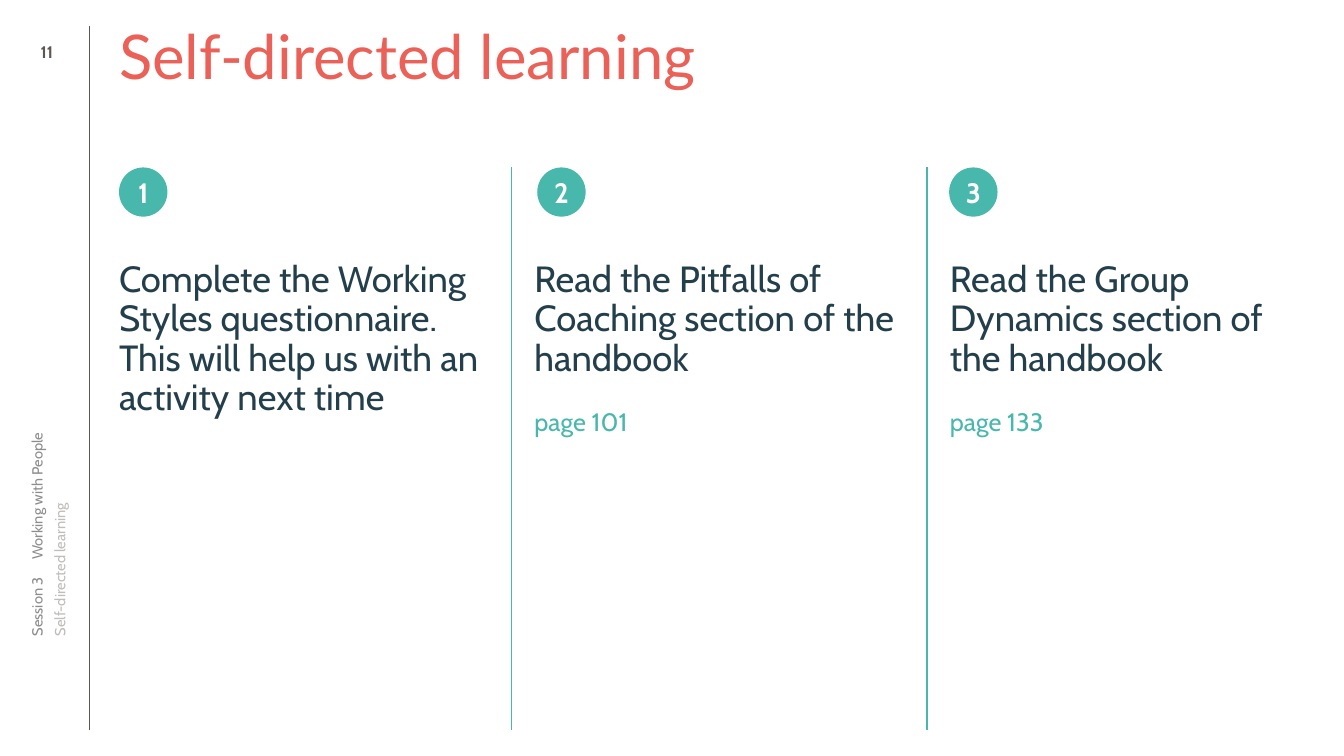
from pptx import Presentation
from pptx.dml.color import RGBColor
from pptx.enum.shapes import MSO_CONNECTOR, MSO_SHAPE
from pptx.enum.text import MSO_ANCHOR, MSO_AUTO_SIZE, PP_ALIGN
from pptx.oxml.ns import qn
from pptx.util import Cm, Pt
from lxml import etree

STRAIGHT = MSO_CONNECTOR.STRAIGHT
ELLIPSE = MSO_SHAPE.OVAL
TOP, MIDDLE = MSO_ANCHOR.TOP, MSO_ANCHOR.MIDDLE
LEFT, CENTER = PP_ALIGN.LEFT, PP_ALIGN.CENTER
NO_AUTOFIT = MSO_AUTO_SIZE.NONE

CORAL = RGBColor(0xEB, 0x60, 0x57)
TEAL = RGBColor(0x49, 0xB8, 0xAC)
NAVY = RGBColor(0x24, 0x3F, 0x4C)
BROWN = RGBColor(0x5C, 0x57, 0x53)
GREY = RGBColor(0x8C, 0x8C, 0x8C)
PALE_GREY = RGBColor(0xBF, 0xBC, 0xB9)
WHITE = RGBColor(0xFF, 0xFF, 0xFF)

BODY_FONT, TITLE_FONT = "Cabin", "Lato"
LINE_SPACING = 0.9
RULE_BOTTOM = 18.39
COLUMN_LEFT, COLUMN_TOP = 3.0, 4.22
COLUMN_WIDTH, COLUMN_PITCH = 9.25, 10.47
DIVIDER_GAP = 0.58
BADGE_WIDTH, BADGE_HEIGHT = 1.22, 1.24

# Task, page reference, shift of the badge from the column's left edge
TASKS = [
    ("Complete the Working Styles questionnaire. "
     "This will help us with an activity next time", None, 0),
    ("Read the Pitfalls of Coaching section of the handbook", "page 101", 0.07),
    ("Read the Group Dynamics section of the handbook", "page 133", -0.02),
]


def set_frame(frame, anchor):
    """Remove the insets, wrap the text and keep the box size fixed."""
    frame.margin_left = frame.margin_right = 0
    frame.margin_top = frame.margin_bottom = 0
    frame.word_wrap = True
    frame.auto_size = NO_AUTOFIT
    frame.vertical_anchor = anchor


def set_font(para, size, color, name=BODY_FONT, bold=False):
    font = para.font
    font.name, font.size, font.bold = name, Pt(size), bold
    font.color.rgb = color


def add_text_box(page, left, top, width, height, anchor=TOP):
    box = page.shapes.add_textbox(Cm(left), Cm(top), Cm(width), Cm(height))
    set_frame(box.text_frame, anchor)
    return box


def add_rule(page, x, top, color, weight):
    rule = page.shapes.add_connector(
        STRAIGHT, Cm(x), Cm(top), Cm(x), Cm(RULE_BOTTOM))
    rule.line.color.rgb = color
    rule.line.width = Pt(weight)
    etree.SubElement(rule._element.spPr, qn("a:effectLst"))


def add_title(page, left, top, width, height):
    title = page.shapes.title
    title.left, title.top = Cm(left), Cm(top)
    title.width, title.height = Cm(width), Cm(height)
    set_frame(title.text_frame, TOP)
    title.text_frame.text = "Self-directed learning"
    para = title.text_frame.paragraphs[0]
    para.alignment = LEFT
    para.line_spacing = LINE_SPACING
    set_font(para, 44, CORAL, TITLE_FONT)


def add_vertical_label(page, text, center_x, center_y, color, tab=None):
    """Add a label that reads upwards, with an optional tab stop in cm."""
    length, thickness = 11.8, 0.5
    box = add_text_box(page, center_x - length / 2, center_y - thickness / 2,
                       length, thickness, MIDDLE)
    box.rotation = 270
    para = box.text_frame.paragraphs[0]
    para.text = text
    if tab is not None:
        tabs = etree.SubElement(para._p.get_or_add_pPr(), qn("a:tabLst"))
        etree.SubElement(tabs, qn("a:tab"), pos=str(Cm(tab)), algn="l")
    set_font(para, 10.5, color)


def add_sidebar(page, left, top, width):
    add_rule(page, left + width, top, BROWN, 0.25)
    number = add_text_box(page, left + 0.66, top, 1.04, 1.3, MIDDLE)
    para = number.text_frame.paragraphs[0]
    para.text = "11"
    para.alignment = CENTER
    set_font(para, 12, BROWN, bold=True)
    add_vertical_label(page, "Session 3\tWorking with People",
                       left + 0.93, 10.13, GREY, tab=1.92)
    add_vertical_label(page, "Self-directed learning",
                       left + 1.5, 10.13, PALE_GREY)


def add_badge(page, number, left, top):
    badge = page.shapes.add_shape(
        ELLIPSE, Cm(left), Cm(top), Cm(BADGE_WIDTH), Cm(BADGE_HEIGHT))
    badge.shadow.inherit = False
    badge.fill.solid()
    badge.fill.fore_color.rgb = TEAL
    badge.line.fill.background()
    set_frame(badge.text_frame, MIDDLE)
    para = badge.text_frame.paragraphs[0]
    para.text = str(number)
    para.alignment = CENTER
    set_font(para, 20, WHITE, bold=True)


def add_task(page, number, task, reference, badge_shift, left, top):
    add_badge(page, number, left + badge_shift, top)
    frame = add_text_box(page, left, top + 2.36, COLUMN_WIDTH, 10.77).text_frame
    para = frame.paragraphs[0]
    para.text = task
    para.line_spacing = LINE_SPACING
    para.space_after = Pt(17)
    set_font(para, 26, NAVY)
    if reference:
        para = frame.add_paragraph()
        para.text = reference
        para.line_spacing = LINE_SPACING
        para.space_before = Pt(5)
        set_font(para, 18, TEAL)


def add_task_columns(page, left, top):
    for index, (task, reference, badge_shift) in enumerate(TASKS):
        column_left = left + index * COLUMN_PITCH
        if index:
            add_rule(page, column_left - DIVIDER_GAP, top, TEAL, 1)
        add_task(page, index + 1, task, reference, badge_shift,
                 column_left, top)


def main():
    deck = Presentation()
    deck.slide_width, deck.slide_height = Cm(33.87), Cm(19.05)
    page = deck.slides.add_slide(deck.slide_layouts.get_by_name("Title Only"))
    add_sidebar(page, 0, 0.66, 2.26)
    add_title(page, COLUMN_LEFT, 0.66, 30.2, 3.18)
    add_task_columns(page, COLUMN_LEFT, COLUMN_TOP)
    deck.save("out.pptx")


if __name__ == "__main__":
    main()
